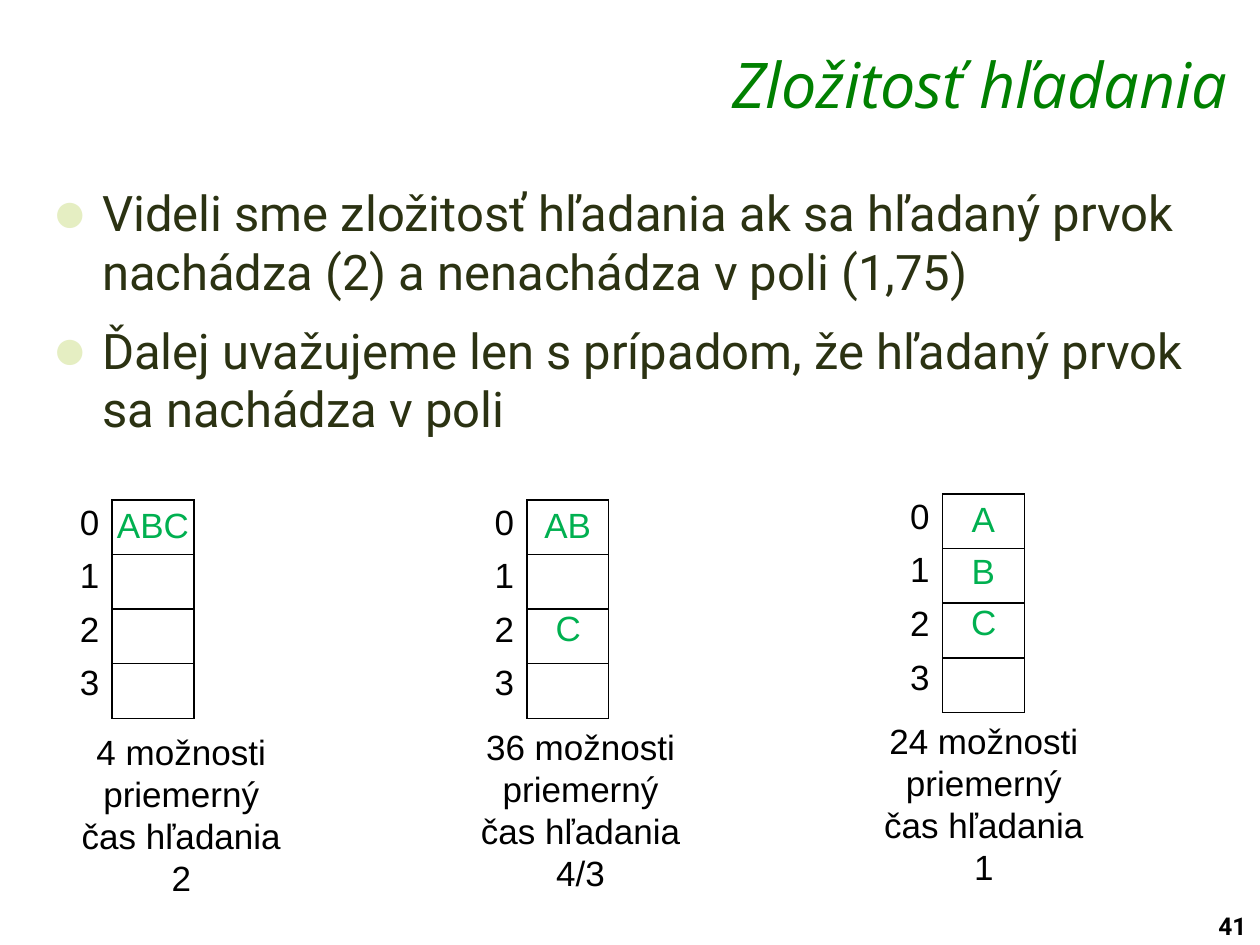
from dataclasses import dataclass

from lxml.etree import SubElement
from pptx import Presentation
from pptx.dml.color import RGBColor
from pptx.enum.text import PP_ALIGN
from pptx.oxml.ns import qn
from pptx.util import Cm, Pt


@dataclass(frozen=True)
class Theme:
    head: str = "Open Sans"
    body: str = "Roboto"
    plain: str = "Arial"
    green: str = "008000"
    olive: str = "2B3212"
    dot: str = "E5EEC2"
    mark: str = "00B050"
    black: str = "000000"
    white: str = "FFFFFF"
    big: int = 36
    mid: int = 28
    small: int = 20
    tiny: int = 14


T = Theme()
TITLE = "Zložitosť hľadania"
POINTS = [
    "Videli sme zložitosť hľadania ak sa hľadaný prvok nachádza (2) a nenachádza v poli (1,75)",
    "Ďalej uvažujeme len s prípadom, že hľadaný prvok sa nachádza v poli",
]
PAGE = "41"
# Positions in cm: at = table corner, note = caption corner
CASES = [
    dict(at=(2.26, 10.08), slots=["ABC", "", "", ""], note=(1.37, 14.61), count=4, time="2"),
    dict(at=(10.62, 10.08), slots=["AB", "", "C", ""], note=(9.42, 14.5), count=36, time="4/3"),
    dict(at=(19, 9.96), slots=["A", "B", "C", ""], note=(17.55, 14.38), count=24, time="1"),
]
CELL_W, CELL_H = 1.65, 1.1
LABEL_GAP, MARK_GAP = 1.08, 1.04
LINE_H = 1.12


def add_text(slide, box, lines, font, size, color, align=PP_ALIGN.LEFT, wrap=True):
    frame = slide.shapes.add_textbox(*map(Cm, box)).text_frame
    frame.word_wrap = wrap
    frame.text = "\n".join(lines)
    for para in frame.paragraphs:
        para.alignment = align
        for run in para.runs:
            run.font.name = font
            run.font.size = Pt(size)
            run.font.color.rgb = RGBColor.from_string(color)
    return frame


def add_bullet(para):
    props = para._p.get_or_add_pPr()
    props.set("marL", str(Cm(1)))
    props.set("indent", str(-Cm(1)))
    tint = SubElement(props, qn("a:buClr"))
    SubElement(tint, qn("a:srgbClr"), val=T.dot)
    SubElement(props, qn("a:buSzPct"), val="120000")
    SubElement(props, qn("a:buFont"), typeface=T.plain)
    SubElement(props, qn("a:buChar"), char="●")


def add_border(cell):
    props = cell._tc.get_or_add_tcPr()
    for spot, side in enumerate(("a:lnL", "a:lnR", "a:lnT", "a:lnB")):
        line = props.makeelement(qn(side), {"w": str(Pt(1))})
        fill = SubElement(line, qn("a:solidFill"))
        SubElement(fill, qn("a:srgbClr"), val=T.black)
        props.insert(spot, line)


def add_grid(slide, left, top, count):
    size = map(Cm, (left, top, CELL_W, CELL_H * count))
    grid = slide.shapes.add_table(count, 1, *size).table
    grid.first_row = grid.horz_banding = False
    for row in grid.rows:
        row.height = Cm(CELL_H)
        cell = row.cells[0]
        cell.fill.solid()
        cell.fill.fore_color.rgb = RGBColor.from_string(T.white)
        add_border(cell)


def add_case(slide, case):
    left, top = case["at"]
    add_grid(slide, left, top, len(case["slots"]))
    for row, word in enumerate(case["slots"]):
        box = (left - 0.9, top - 0.12 + row * LABEL_GAP, 0.91, LINE_H)
        add_text(slide, box, [str(row)], T.plain, T.small, T.black)
        if word:
            width = 0.5 + 0.49 * len(word)
            box = (left + (CELL_W - width) / 2, top - 0.05 + row * MARK_GAP, width, LINE_H)
            add_text(slide, box, [word], T.plain, T.small, T.mark, PP_ALIGN.CENTER, False)
    lines = [f"{case['count']} možnosti", "priemerný\včas hľadania", case["time"]]
    add_text(slide, (*case["note"], 4.57, 3.68), lines, T.plain, T.small, T.black,
             PP_ALIGN.CENTER, False)


def main():
    deck = Presentation()
    deck.slide_width, deck.slide_height = Cm(25.4), Cm(19.05)
    slide = deck.slides.add_slide(deck.slide_layouts[6])

    title = add_text(slide, (5.82, 0.79, 19.18, 1.47), [TITLE], T.head, T.big, T.green,
                     PP_ALIGN.RIGHT)
    title.paragraphs[0].runs[0].font.italic = True

    body = add_text(slide, (0.81, 3.56, 23.83, 14.73), POINTS, T.body, T.mid, T.olive)
    for spot, para in enumerate(body.paragraphs):
        para.space_before = Pt(T.mid * 0.2 if spot else 0)
        para.space_after = Pt(T.mid * 0.2)
        add_bullet(para)

    for case in CASES:
        add_case(slide, case)

    page = add_text(slide, (24.31, 18.24, 1.3, 0.84), [PAGE], T.body, T.tiny, T.black)
    page.paragraphs[0].runs[0].font.bold = True
    deck.save("out.pptx")


if __name__ == "__main__":
    main()
